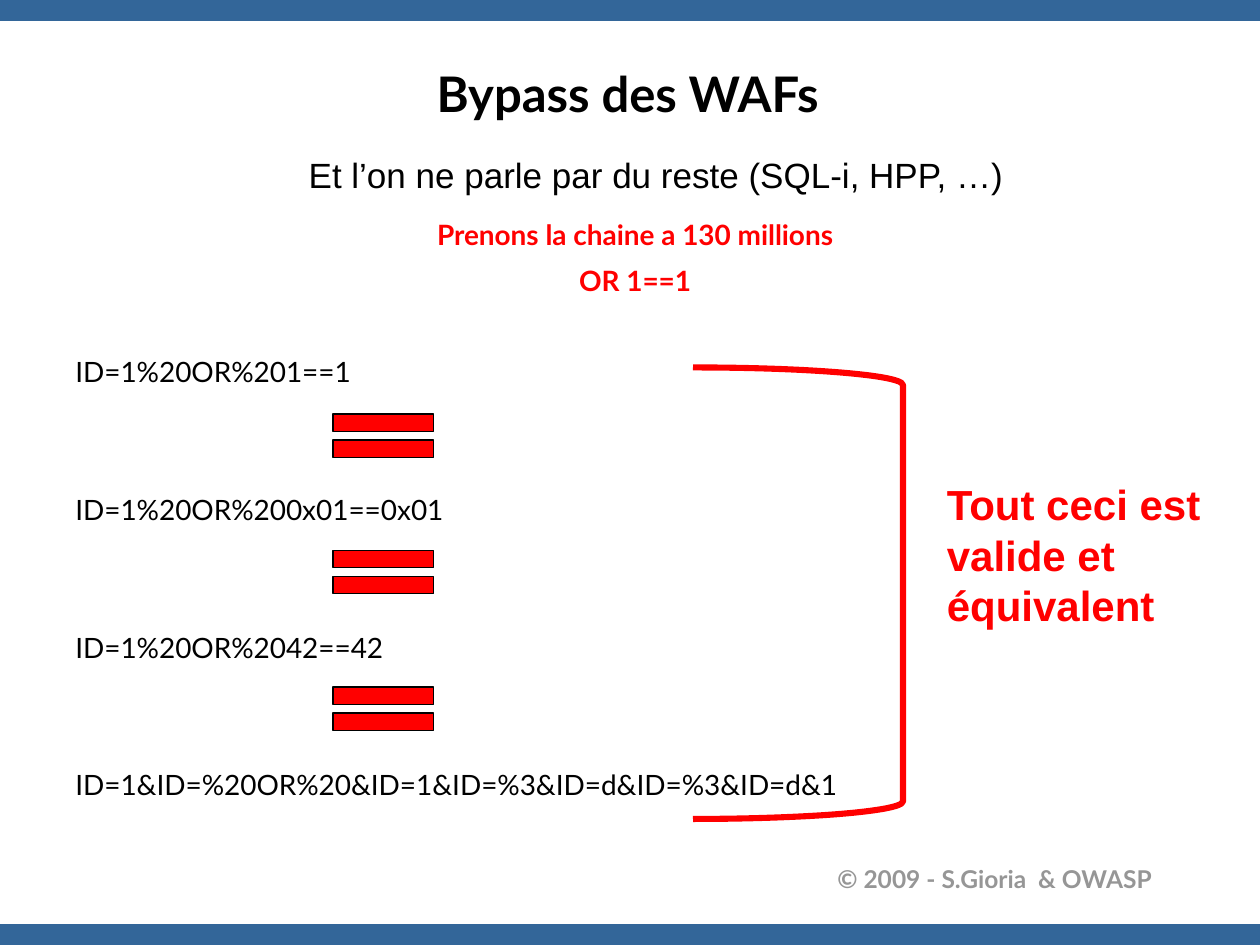
from dataclasses import dataclass
from typing import Optional

from pptx import Presentation
from pptx.dml.color import RGBColor
from pptx.enum.shapes import MSO_SHAPE
from pptx.enum.text import MSO_ANCHOR, PP_ALIGN
from pptx.util import Inches, Pt

RECT, EQUAL, BRACKET = MSO_SHAPE.RECTANGLE, MSO_SHAPE.MATH_EQUAL, MSO_SHAPE.RIGHT_BRACKET
LEFT, CENTER, RIGHT = PP_ALIGN.LEFT, PP_ALIGN.CENTER, PP_ALIGN.RIGHT
TOP, MIDDLE = MSO_ANCHOR.TOP, MSO_ANCHOR.MIDDLE

BLUE = RGBColor(0x33, 0x66, 0x99)
RED = RGBColor(0xFF, 0x00, 0x00)
BLACK = RGBColor(0x00, 0x00, 0x00)
GREY = RGBColor(0x96, 0x96, 0x96)

WIDTH, HEIGHT = Inches(10), Inches(7.5)
COLS, ROWS = 120, 90


@dataclass
class Box:
    """A place on the slide, in grid columns and rows."""
    x: float
    y: float
    w: float
    h: float

    def place(self) -> tuple[int, int, int, int]:
        col, row = WIDTH / COLS, HEIGHT / ROWS
        return (round(self.x * col), round(self.y * row),
                round(self.w * col), round(self.h * row))


@dataclass
class Line:
    text: str
    size: float
    color: RGBColor = BLACK
    bold: bool = False
    font: str = "Lato"
    align: PP_ALIGN = LEFT
    before: float = 0


@dataclass
class Block:
    box: Box
    lines: list[Line]
    insets: tuple[float, float, float, float] = (0.1, 0.05, 0.1, 0.05)
    anchor: MSO_ANCHOR = TOP
    wrap: bool = True


@dataclass
class Figure:
    kind: MSO_SHAPE
    box: Box
    fill: Optional[RGBColor] = None
    edge: Optional[RGBColor] = None
    weight: float = 0


def draw_figure(slide, fig: Figure) -> None:
    shape = slide.shapes.add_shape(fig.kind, *fig.box.place())
    shape.shadow.inherit = False
    if fig.fill is None:
        shape.fill.background()
    else:
        shape.fill.solid()
        shape.fill.fore_color.rgb = fig.fill
    if fig.edge is None:
        shape.line.fill.background()
    else:
        shape.line.color.rgb = fig.edge
        shape.line.width = Pt(fig.weight)


def draw_text(slide, block: Block) -> None:
    frame = slide.shapes.add_textbox(*block.box.place()).text_frame
    frame.word_wrap = block.wrap
    frame.vertical_anchor = block.anchor
    (frame.margin_left, frame.margin_top,
     frame.margin_right, frame.margin_bottom) = map(Inches, block.insets)
    for i, line in enumerate(block.lines):
        para = frame.add_paragraph() if i else frame.paragraphs[0]
        para.alignment = line.align
        if line.before:
            para.space_before = Pt(line.before)
        run = para.add_run()
        run.text = line.text
        run.font.name = line.font
        run.font.size = Pt(line.size)
        run.font.bold = line.bold
        run.font.color.rgb = line.color


GAP = 7
STEP = 16 * 1.2 + GAP
QUERIES = [
    "ID=1%20OR%201==1",
    "ID=1%20OR%200x01==0x01",
    "ID=1%20OR%2042==42",
    "ID=1&ID=%20OR%20&ID=1&ID=%3&ID=d&ID=%3&ID=d&1",
]

FIGURES = [Figure(RECT, Box(0, y, COLS, 2), BLUE) for y in (0, ROWS - 2)]
FIGURES += [Figure(EQUAL, Box(30, 38 + 13 * i, 13, 7), RED, BLACK, 0.75)
            for i in range(len(QUERIES) - 1)]
FIGURES.append(Figure(BRACKET, Box(66, 35, 20, 43), edge=RED, weight=3.5))

BODY = [
    Line("Prenons la chaine a 130 millions", 16, RED, True, align=CENTER),
    Line("OR 1==1", 16, RED, True, align=CENTER, before=GAP),
]
BODY += [Line(query, 16, before=GAP + STEP * (2 if i else 1))
         for i, query in enumerate(QUERIES)]

BLOCKS = [
    Block(Box(64, 82.3, 46.2, 4.2),
          [Line("© 2009 - S.Gioria  & OWASP", 14, GREY, True, align=RIGHT)],
          (0, 0, 0.04, 0)),
    Block(Box(6, 0.6, 108, 16.4),
          [Line("Bypass des WAFs", 28, bold=True, align=CENTER)],
          (0.06, 0.06, 0.1, 0.06), MIDDLE),
    Block(Box(6, 20, 109, 60), BODY, (0.1, 0.06, 0.1, 0.06)),
    Block(Box(28, 14, 69, 5.3),
          [Line("Et l’on ne parle par du reste (SQL-i, HPP, …)", 20,
                font="Arial", align=CENTER)], wrap=False),
    Block(Box(89, 45, 31, 15.7),
          [Line("Tout ceci est valide et équivalent", 24, RED, True, "Arial")]),
]


def main() -> None:
    deck = Presentation()
    deck.slide_width, deck.slide_height = WIDTH, HEIGHT
    slide = deck.slides.add_slide(deck.slide_layouts[6])
    for fig in FIGURES:
        draw_figure(slide, fig)
    for block in BLOCKS:
        draw_text(slide, block)
    deck.save("out.pptx")


if __name__ == "__main__":
    main()
